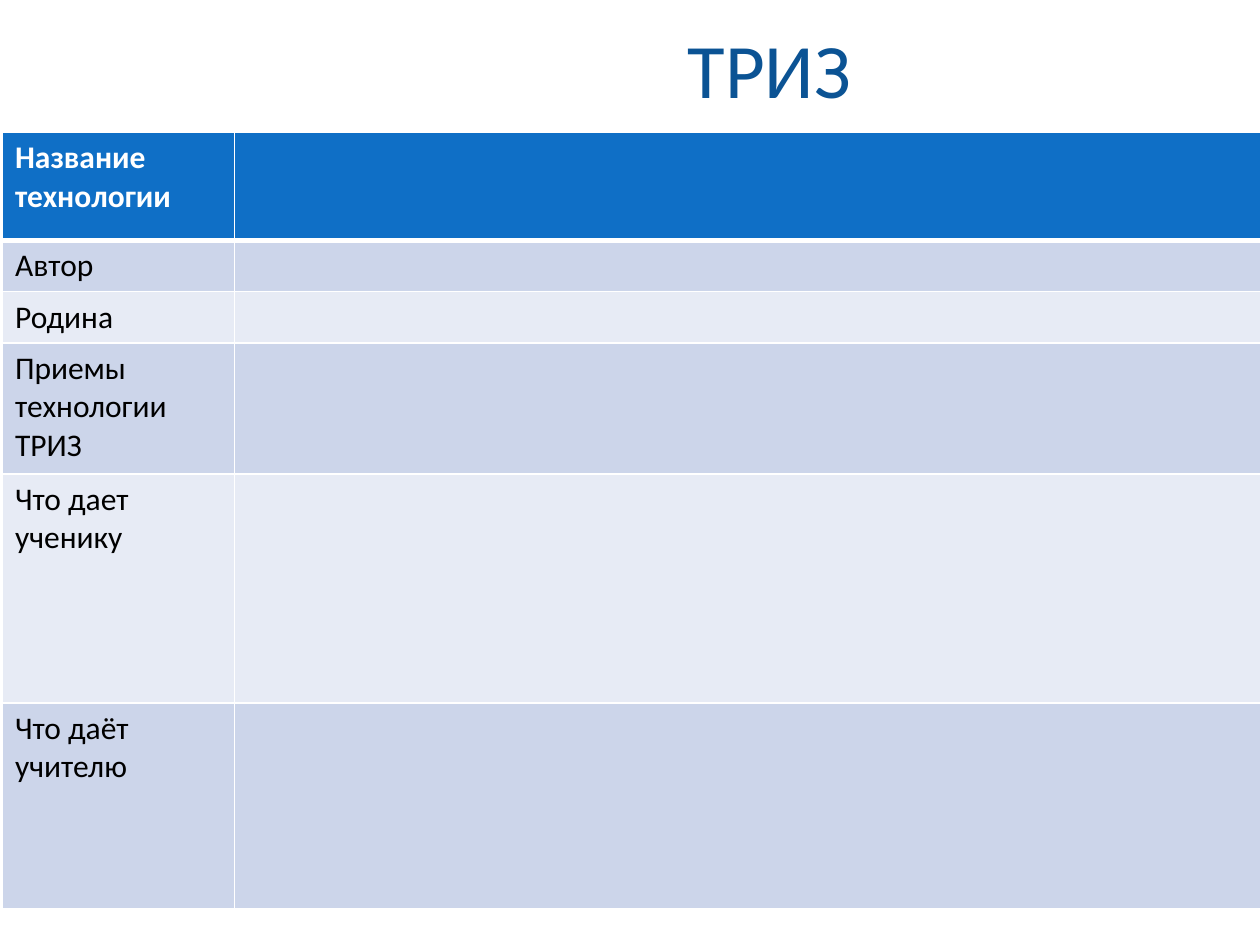
from dataclasses import dataclass

from lxml import etree
from pptx import Presentation
from pptx import util as u
from pptx.dml.color import RGBColor
from pptx.enum import text
from pptx.oxml import ns


@dataclass(frozen=True)
class Theme:
    font: str = "Calibri"
    title_size: int = 44
    body_size: int = 18
    title: str = "0B5394"
    header: str = "0F6FC6"
    bands: tuple = ("CCD5EA", "E7EBF5")
    light: str = "FFFFFF"
    dark: str = "000000"
    rule: float = 1
    header_rule: float = 3


THEME = Theme()


def write(frame, words, *, size, color, bold=False, align=text.PP_ALIGN.LEFT):
    paragraph = frame.paragraphs[0]
    paragraph.text = words
    paragraph.alignment = align
    paragraph.font.name = THEME.font
    paragraph.font.size = u.Pt(size)
    paragraph.font.bold = bold
    paragraph.font.color.rgb = RGBColor.from_string(color)


def add_border(cell, side, width):
    line = etree.SubElement(cell._tc.get_or_add_tcPr(), ns.qn(f"a:ln{side}"),
                            w=str(u.Pt(width)))
    fill = etree.SubElement(line, ns.qn("a:solidFill"))
    etree.SubElement(fill, ns.qn("a:srgbClr"), val=THEME.light)


presentation = Presentation()
presentation.slide_width = u.Inches(10)
presentation.slide_height = u.Inches(7.5)
slide = presentation.slides.add_slide(presentation.slide_layouts[5])

# Title
title = slide.shapes.title
title.left, title.top = u.Inches(2.56), u.Inches(-0.19)
title.width, title.height = u.Inches(7.09), u.Inches(1.46)
title.text_frame.vertical_anchor = text.MSO_ANCHOR.MIDDLE
write(title.text_frame, "ТРИЗ", size=THEME.title_size, color=THEME.title,
      align=text.PP_ALIGN.CENTER)

# Table: a label column and an empty column for answers
rows = [
    ("Название технологии", 0.86),
    ("Автор", 0.4),
    ("Родина", 0.4),
    ("Приемы технологии ТРИЗ", 1.04),
    ("Что дает ученику", 1.82),
    ("Что даёт учителю", 1.63),
]
column_widths = [1.84, 8.16]
table = slide.shapes.add_table(
    len(rows), len(column_widths), u.Inches(0.02), u.Inches(1.05),
    u.Inches(sum(column_widths)), u.Inches(sum(height for _, height in rows)),
).table
for column, width in zip(table.columns, column_widths):
    column.width = u.Inches(width)

for index, (label, height) in enumerate(rows):
    is_header = index == 0
    table.rows[index].height = u.Inches(height)
    fill_color = THEME.header if is_header else THEME.bands[(index - 1) % 2]
    for cell in table.rows[index].cells:
        for side in "LRTB":
            beside_header = (index, side) in ((0, "B"), (1, "T"))
            add_border(cell, side, THEME.header_rule if beside_header else THEME.rule)
        cell.fill.solid()
        cell.fill.fore_color.rgb = RGBColor.from_string(fill_color)
    write(table.cell(index, 0).text_frame, label, size=THEME.body_size,
          color=THEME.light if is_header else THEME.dark, bold=is_header)

presentation.save("out.pptx")
